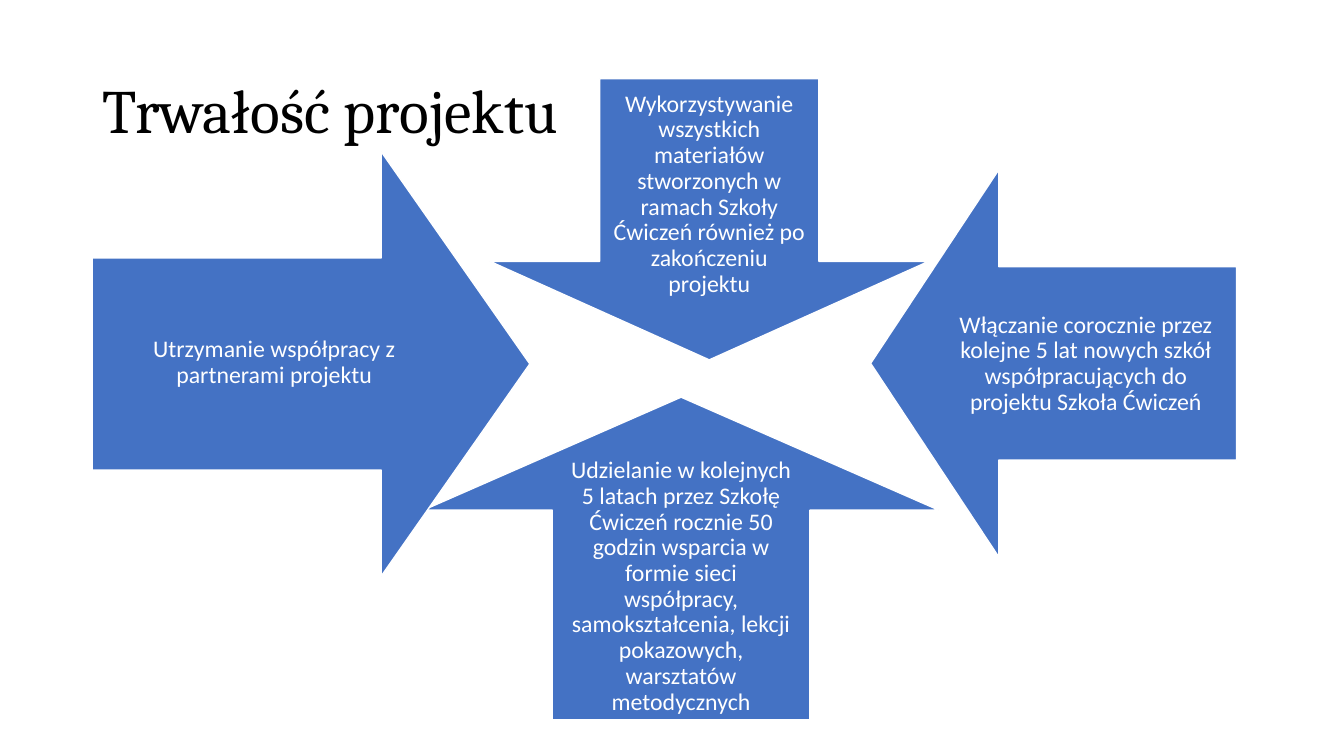
from pptx import Presentation
from pptx.dml.color import RGBColor
from pptx.enum import shapes, text
from pptx.util import Inches, Pt

BLUE = RGBColor(0x44, 0x72, 0xC4)
WHITE = RGBColor(0xFF, 0xFF, 0xFF)
BLACK = RGBColor(0x00, 0x00, 0x00)

# Each entry: arrow frame, rotation, label frame, label wording
ARROWS = [
    ((4.86, 0.78, 4.35, 2.79), 0, (5.95, 0.78, 2.17, 2.3),
     "Wykorzystywanie wszystkich materiałów stworzonych w ramach Szkoły "
     "Ćwiczeń również po zakończeniu projektu"),
    ((8.53, 1.79, 3.84, 3.63), 90, (9.27, 2.65, 3, 1.92),
     "Włączanie corocznie przez kolejne 5 lat nowych szkół współpracujących "
     "do projektu Szkoła Ćwiczeń"),
    ((4.2, 3.94, 5.11, 3.2), 180, (5.48, 4.5, 2.55, 2.64),
     "Udzielanie w kolejnych 5 latach przez Szkołę Ćwiczeń rocznie 50 godzin "
     "wsparcia w formie sieci współpracy, samokształcenia, lekcji pokazowych, "
     "warsztatów metodycznych"),
    ((0.98, 1.44, 4.21, 4.34), 270, (0.92, 2.55, 3.6, 2.1),
     "Utrzymanie współpracy z partnerami projektu"),
]


def inches(frame):
    return [Inches(length) for length in frame]


def write(frame, wording, font_name, size, color, align):
    frame.word_wrap = True
    frame.auto_size = text.MSO_AUTO_SIZE.NONE
    frame.vertical_anchor = text.MSO_ANCHOR.MIDDLE
    frame.text = wording
    para = frame.paragraphs[0]
    para.alignment = align
    para.line_spacing = 0.9
    span = para.runs[0]
    span.font.name = font_name
    span.font.size = Pt(size)
    span.font.color.rgb = color


def set_title(page, wording):
    title = page.shapes.title
    title.left, title.top, title.width, title.height = inches((0.92, 0.4, 11.5, 1.45))
    write(title.text_frame, wording, "Cambria", 44, BLACK, text.PP_ALIGN.LEFT)


def add_arrow(page, frame, rotation):
    arrow = page.shapes.add_shape(shapes.MSO_SHAPE.DOWN_ARROW, *inches(frame))
    arrow.adjustments[0] = 0.5
    arrow.adjustments[1] = 0.35
    arrow.rotation = rotation
    arrow.shadow.inherit = False
    arrow.fill.solid()
    arrow.fill.fore_color.rgb = BLUE
    arrow.line.color.rgb = WHITE
    arrow.line.width = Pt(1)


def add_label(page, frame, wording):
    box = page.shapes.add_textbox(*inches(frame))
    body = box.text_frame
    body.margin_left = body.margin_right = Inches(0.13)
    body.margin_top = body.margin_bottom = Inches(0.13)
    write(body, wording, "Calibri", 17, WHITE, text.PP_ALIGN.CENTER)


def main():
    deck = Presentation()
    deck.slide_width, deck.slide_height = Inches(13.33), Inches(7.5)
    page = deck.slides.add_slide(deck.slide_layouts.get_by_name("Title Only"))

    # Title
    set_title(page, "Trwałość projektu")

    # Four arrows pointing at the centre, each with its label
    for arrow_frame, rotation, label_frame, wording in ARROWS:
        add_arrow(page, arrow_frame, rotation)
        add_label(page, label_frame, wording)

    deck.save("out.pptx")


if __name__ == "__main__":
    main()
